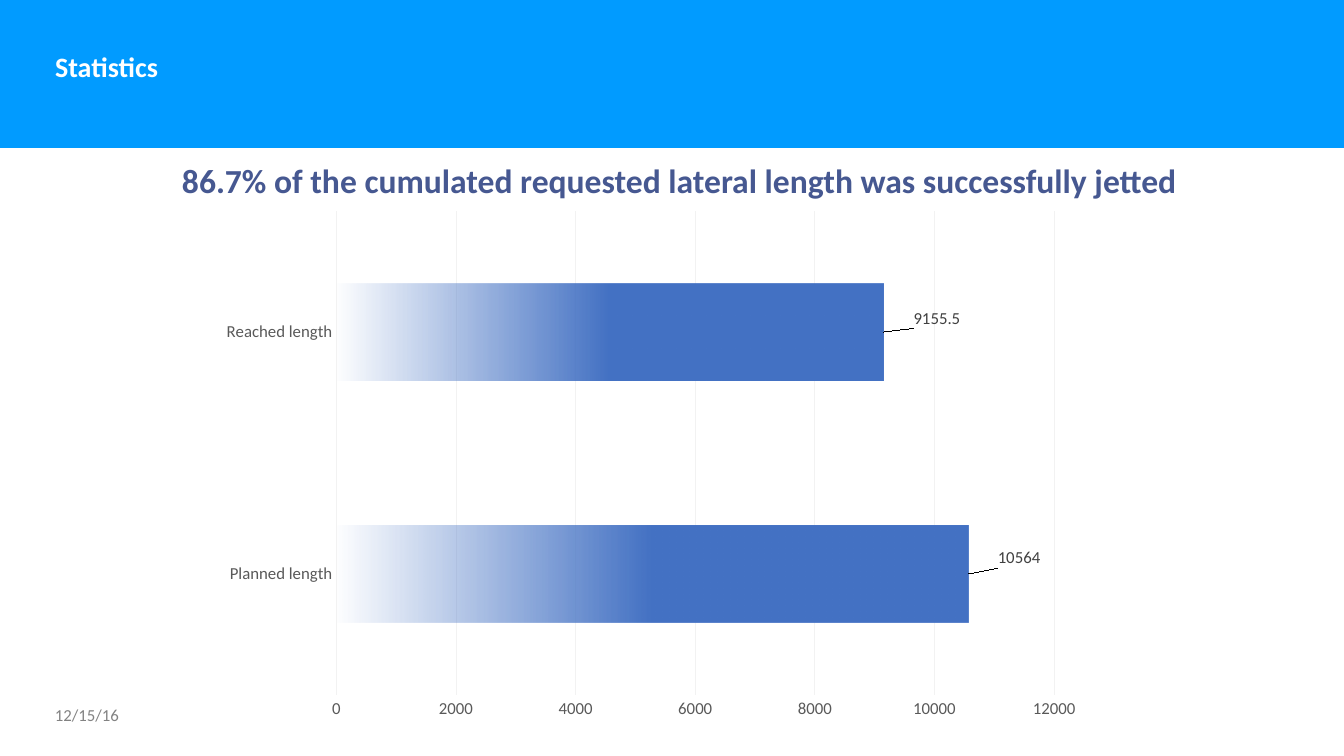
"""Build the Statistics slide comparing planned and reached lateral length."""
import dataclasses

import lxml.etree
import pptx
import pptx.chart.data
import pptx.dml.color
import pptx.enum.chart
import pptx.enum.shapes
import pptx.enum.text
import pptx.oxml.ns
import pptx.util

TITLE = "Statistics"
HEADLINE = "86.7% of the cumulated requested lateral length was successfully jetted"
DATE = "12/15/16"
SERIES_NAME = "Series 1"
LENGTHS = {"Planned length": 10564, "Reached length": 9155.5}
AXIS_MAXIMUM, AXIS_STEP = 12000, 2000

SLIDE_SIZE = (1344, 756)
BAND_BOX = (0, 0, 1344, 148)
TITLE_BOX = (45, 49, 446, 38)
HEADLINE_BOX = (26, 155, 1307, 52)
DATE_BOX = (45, 698, 292, 33)
CHART_BOX = (210, 201, 884, 529)
PLOT_BOX = (126, 10, 718, 484)
LABEL_SHIFTS = [(26, -16), (26, -14)]
EMU_PER_PX = 914400 / 100.8


@dataclasses.dataclass(frozen=True)
class Theme:
    """Fonts, sizes and colours of the slide."""
    font: str = "Calibri"
    title_size: int = 20
    headline_size: int = 24
    small_size: int = 12
    band: str = "019BFF"
    white: str = "FFFFFF"
    headline: str = "465891"
    date: str = "828282"
    axis: str = "595959"
    label: str = "404040"
    grid: str = "F2F2F2"
    bar: str = "4472C4"


THEME = Theme()


def emu(*lengths):
    """Turn px lengths into EMU."""
    return [pptx.util.Emu(round(length * EMU_PER_PX)) for length in lengths]


def rgb(color):
    """Return a colour object for a hex value."""
    return pptx.dml.color.RGBColor.from_string(color)


def format_font(font, size, color, bold=False):
    """Apply the theme font with a size and colour."""
    font.name, font.size, font.bold = THEME.font, pptx.util.Pt(size), bold
    font.color.rgb = rgb(color)


def write_text(shape, text, *, box, size, color, bold=False, align="LEFT",
               anchor="MIDDLE", line_spacing=1.0):
    """Place a shape and fill it with one formatted paragraph."""
    shape.left, shape.top, shape.width, shape.height = emu(*box)
    frame = shape.text_frame
    frame.text = text
    frame.word_wrap = True
    frame.auto_size = pptx.enum.text.MSO_AUTO_SIZE.NONE
    frame.vertical_anchor = pptx.enum.text.MSO_ANCHOR[anchor]
    paragraph = frame.paragraphs[0]
    paragraph.alignment = pptx.enum.text.PP_ALIGN[align]
    paragraph.line_spacing = line_spacing
    format_font(paragraph.runs[0].font, size, color, bold)


def manual_layout(**settings):
    """Return a chart layout element with the given settings in order."""
    layout = lxml.etree.Element(pptx.oxml.ns.qn("c:layout"))
    manual = lxml.etree.SubElement(layout, pptx.oxml.ns.qn("c:manualLayout"))
    for name, value in settings.items():
        lxml.etree.SubElement(manual, pptx.oxml.ns.qn(f"c:{name}"), val=str(value))
    return layout


def fractions(*lengths):
    """Express px lengths as shares of the chart width and height in turn."""
    return [round(length / CHART_BOX[2 + index % 2], 3)
            for index, length in enumerate(lengths)]


def format_axes(chart):
    """Style both axes and the vertical grid lines."""
    for axis in (chart.category_axis, chart.value_axis):
        axis.major_tick_mark = pptx.enum.chart.XL_TICK_MARK.NONE
        axis.minor_tick_mark = pptx.enum.chart.XL_TICK_MARK.NONE
        axis.format.line.fill.background()
        format_font(axis.tick_labels.font, THEME.small_size, THEME.axis)
    axis = chart.value_axis
    axis.minimum_scale, axis.maximum_scale = 0, AXIS_MAXIMUM
    axis.major_unit = AXIS_STEP
    axis.has_major_gridlines = True
    grid_line = axis.major_gridlines.format.line
    grid_line.color.rgb = rgb(THEME.grid)
    grid_line.width = pptx.util.Pt(0.75)


def format_bars(series):
    """Fade the bars out towards the axis and offset their labels."""
    series.invert_if_negative = False
    fill = series.format.fill
    fill.gradient()
    fill.gradient_angle = 180
    for stop, position in zip(fill.gradient_stops, (0.5, 1)):
        stop.position = position
        stop.color.rgb = rgb(THEME.bar)
    colors = list(series._element.iter(pptx.oxml.ns.qn("a:srgbClr")))
    lxml.etree.SubElement(colors[-1], pptx.oxml.ns.qn("a:alpha"), val="0")
    series.format.line.fill.background()

    series.data_labels.show_value = True
    format_font(series.data_labels.font, THEME.small_size, THEME.label)
    for index in range(len(LENGTHS)):
        label = series.points[index].data_label
        format_font(label.font, THEME.small_size, THEME.label)
        label.position = pptx.enum.chart.XL_LABEL_POSITION.OUTSIDE_END
    label_elements = series._element.iter(pptx.oxml.ns.qn("c:dLbl"))
    for element, shift in zip(label_elements, LABEL_SHIFTS):
        x, y = fractions(*shift)
        element.find(pptx.oxml.ns.qn("c:idx")).addnext(manual_layout(x=x, y=y))


def add_length_chart(slide):
    """Add the bar chart of planned and reached length."""
    data = pptx.chart.data.CategoryChartData()
    data.categories = list(LENGTHS)
    data.add_series(SERIES_NAME, list(LENGTHS.values()))
    chart = slide.shapes.add_chart(
        pptx.enum.chart.XL_CHART_TYPE.BAR_CLUSTERED, *emu(*CHART_BOX), data).chart
    chart.has_legend = chart.has_title = False
    format_font(chart.font, THEME.small_size, THEME.axis)
    plot = chart.plots[0]
    plot.gap_width = 150
    plot.vary_by_categories = False
    format_axes(chart)
    format_bars(plot.series[0])

    plot_area = chart._chartSpace.find(".//" + pptx.oxml.ns.qn("c:plotArea"))
    for layout in plot_area.findall(pptx.oxml.ns.qn("c:layout")):
        plot_area.remove(layout)
    x, y, width, height = fractions(*PLOT_BOX)
    plot_area.insert(0, manual_layout(layoutTarget="inner", xMode="edge", yMode="edge",
                                      x=x, y=y, w=width, h=height))


def main():
    """Assemble and save the slide."""
    presentation = pptx.Presentation()
    presentation.slide_width, presentation.slide_height = emu(*SLIDE_SIZE)
    slide = presentation.slides.add_slide(presentation.slide_layouts[5])
    title = slide.shapes.title
    write_text(title, TITLE, box=TITLE_BOX, size=THEME.title_size,
               color=THEME.white, bold=True, line_spacing=0.9)

    band = slide.shapes.add_shape(
        pptx.enum.shapes.MSO_SHAPE.RECTANGLE, *emu(*BAND_BOX))
    band.shadow.inherit = False
    band.fill.solid()
    band.fill.fore_color.rgb = rgb(THEME.band)
    band.line.fill.background()
    title.element.addprevious(band.element)

    write_text(slide.shapes.add_textbox(*emu(*HEADLINE_BOX)), HEADLINE,
               box=HEADLINE_BOX, size=THEME.headline_size, color=THEME.headline,
               bold=True, align="CENTER", anchor="TOP")
    write_text(slide.shapes.add_textbox(*emu(*DATE_BOX)), DATE,
               box=DATE_BOX, size=THEME.small_size, color=THEME.date)
    add_length_chart(slide)
    presentation.save("out.pptx")


if __name__ == "__main__":
    main()
